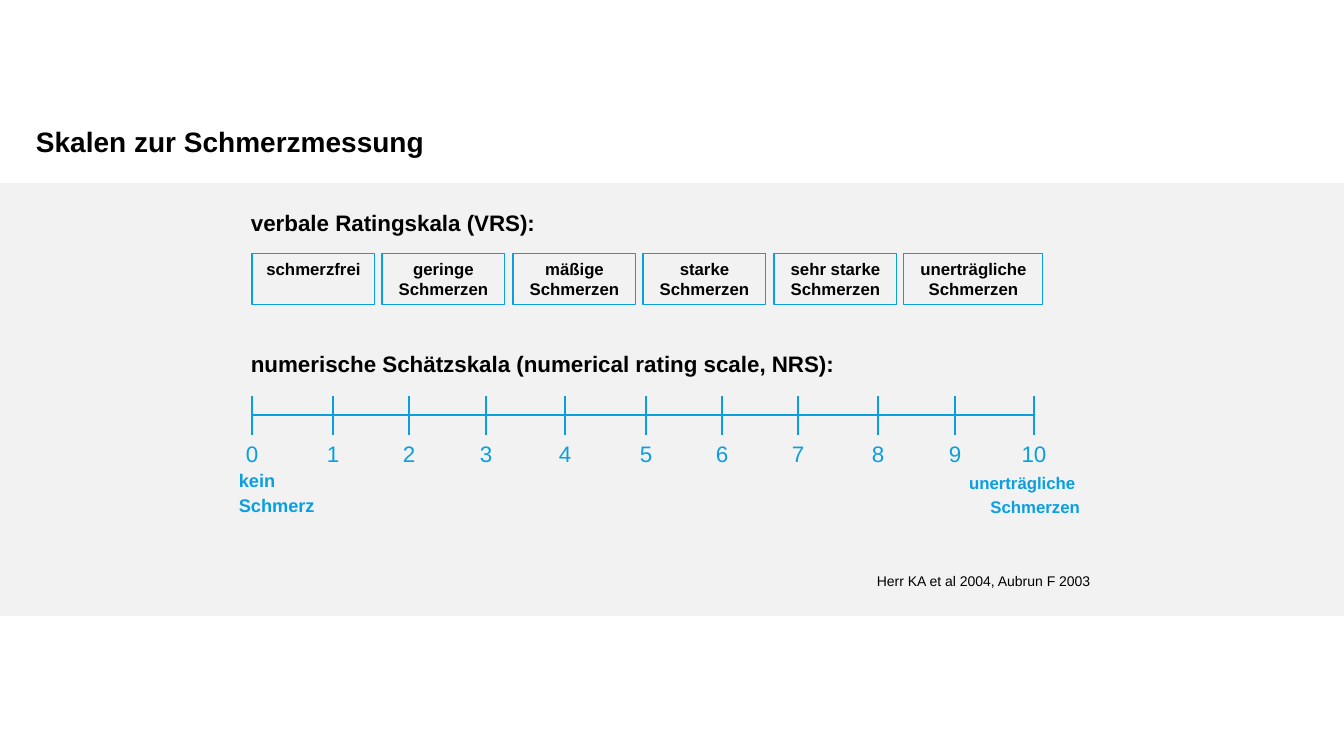
from pptx import Presentation
from pptx.dml.color import RGBColor
from pptx.enum.shapes import MSO_CONNECTOR, MSO_SHAPE
from pptx.enum.text import MSO_ANCHOR, PP_ALIGN
from pptx.oxml.ns import qn
from pptx.util import Emu, Pt
from lxml import etree

RECTANGLE = MSO_SHAPE.RECTANGLE
STRAIGHT = MSO_CONNECTOR.STRAIGHT
TOP, MIDDLE = MSO_ANCHOR.TOP, MSO_ANCHOR.MIDDLE
LEFT, CENTER, RIGHT = PP_ALIGN.LEFT, PP_ALIGN.CENTER, PP_ALIGN.RIGHT

# Content
TITLE = "Skalen zur Schmerzmessung"
VERBAL_HEADING = "verbale Ratingskala (VRS):"
VERBAL_LEVELS = ["schmerzfrei", "geringe Schmerzen", "mäßige Schmerzen",
                 "starke Schmerzen", "sehr starke Schmerzen",
                 "unerträgliche Schmerzen"]
NUMERIC_HEADING = "numerische Schätzskala (numerical rating scale, NRS):"
TICK_POSITIONS = [252, 333, 409, 486, 565, 646, 722, 798, 878, 955, 1034]
LOW_END = ["kein", "Schmerz"]
HIGH_END = ["unerträgliche ", "Schmerzen"]
CITATION = "Herr KA et al 2004, Aubrun F 2003"


class Theme:
    font = "Arial"
    black = RGBColor(0x00, 0x00, 0x00)
    blue = RGBColor(0x0A, 0x9F, 0xE0)
    panel = RGBColor(0xF2, 0xF2, 0xF2)
    title, heading, low_end, label, citation = 20, 16, 13, 12, 10
    box_line, scale_line = 0.75, 2


# Geometry in px
SLIDE_WIDTH, SLIDE_HEIGHT = 1344, 756
EMU_PER_PX = 12192000 / SLIDE_WIDTH
BOX_FIRST, BOX_LAST, BOX_TOP, BOX_HEIGHT = 252, 904, 254, 51
BOX_WIDTH, LAST_BOX_WIDTH = 123, 139
AXIS_Y, TICK_TOP, TICK_BOTTOM = 415, 396, 435


def px(length):
    return Emu(round(length * EMU_PER_PX))


def write(shape, lines, size, color=Theme.black, bold=True, align=LEFT, anchor=TOP):
    frame = shape.text_frame
    frame.word_wrap = True
    frame.vertical_anchor = anchor
    for index, line in enumerate(lines):
        paragraph = frame.paragraphs[0] if index == 0 else frame.add_paragraph()
        paragraph.text = line
        paragraph.alignment = align
        if index:
            paragraph.space_before = Pt(size * 0.2)
        font = paragraph.font
        font.name, font.size, font.bold = Theme.font, Pt(size), bold
        font.color.rgb = color
    return frame


def add_text(slide, bounds, lines, size, **style):
    return write(slide.shapes.add_textbox(*map(px, bounds)), lines, size, **style)


def add_rectangle(slide, bounds):
    shape = slide.shapes.add_shape(RECTANGLE, *map(px, bounds))
    shape.shadow.inherit = False
    return shape


def add_line(slide, *ends):
    line = slide.shapes.add_connector(STRAIGHT, *map(px, ends))
    line.line.color.rgb = Theme.blue
    line.line.width = Pt(Theme.scale_line)
    etree.SubElement(line._element.spPr, qn("a:effectLst"))


def add_verbal_scale(slide):
    add_text(slide, (241, 204, 873, 37), [VERBAL_HEADING], Theme.heading)
    last = len(VERBAL_LEVELS) - 1
    pitch = (BOX_LAST - BOX_FIRST) / last
    for index, level in enumerate(VERBAL_LEVELS):
        width = LAST_BOX_WIDTH if index == last else BOX_WIDTH
        left = round(BOX_FIRST + index * pitch)
        box = add_rectangle(slide, (left, BOX_TOP, width, BOX_HEIGHT))
        box.fill.background()
        box.line.color.rgb = Theme.blue
        box.line.width = Pt(Theme.box_line)
        write(box, [level], Theme.label, align=CENTER)


def add_numeric_scale(slide):
    add_text(slide, (241, 345, 873, 37), [NUMERIC_HEADING], Theme.heading)
    add_line(slide, TICK_POSITIONS[0], AXIS_Y, TICK_POSITIONS[-1], AXIS_Y)
    for value, x in enumerate(TICK_POSITIONS):
        add_line(slide, x, TICK_TOP, x, TICK_BOTTOM)
        width = 48 if value >= 10 else 36
        add_text(slide, (x - width / 2, TICK_BOTTOM, width, 37), [str(value)],
                 Theme.heading, color=Theme.blue, bold=False, align=CENTER)
    add_text(slide, (229, 464, 116, 58), LOW_END, Theme.low_end, color=Theme.blue)
    add_text(slide, (936, 468, 154, 55), HIGH_END, Theme.label,
             color=Theme.blue, align=RIGHT)


def main():
    presentation = Presentation()
    presentation.slide_width = px(SLIDE_WIDTH)
    presentation.slide_height = px(SLIDE_HEIGHT)
    slide = presentation.slides.add_slide(presentation.slide_layouts[6])

    # Background panel and title
    panel = add_rectangle(slide, (0, 183, SLIDE_WIDTH, 433))
    panel.fill.solid()
    panel.fill.fore_color.rgb = Theme.panel
    panel.line.fill.background()
    title = add_text(slide, (36, 114, 1270, 54), [TITLE], Theme.title, anchor=MIDDLE)
    title.margin_left = title.margin_right = 0
    title.margin_top = title.margin_bottom = 0

    # Scales and citation
    add_verbal_scale(slide)
    add_numeric_scale(slide)
    add_text(slide, (615, 568, 485, 27), [CITATION], Theme.citation,
             bold=False, align=RIGHT)

    presentation.save("out.pptx")


if __name__ == "__main__":
    main()
